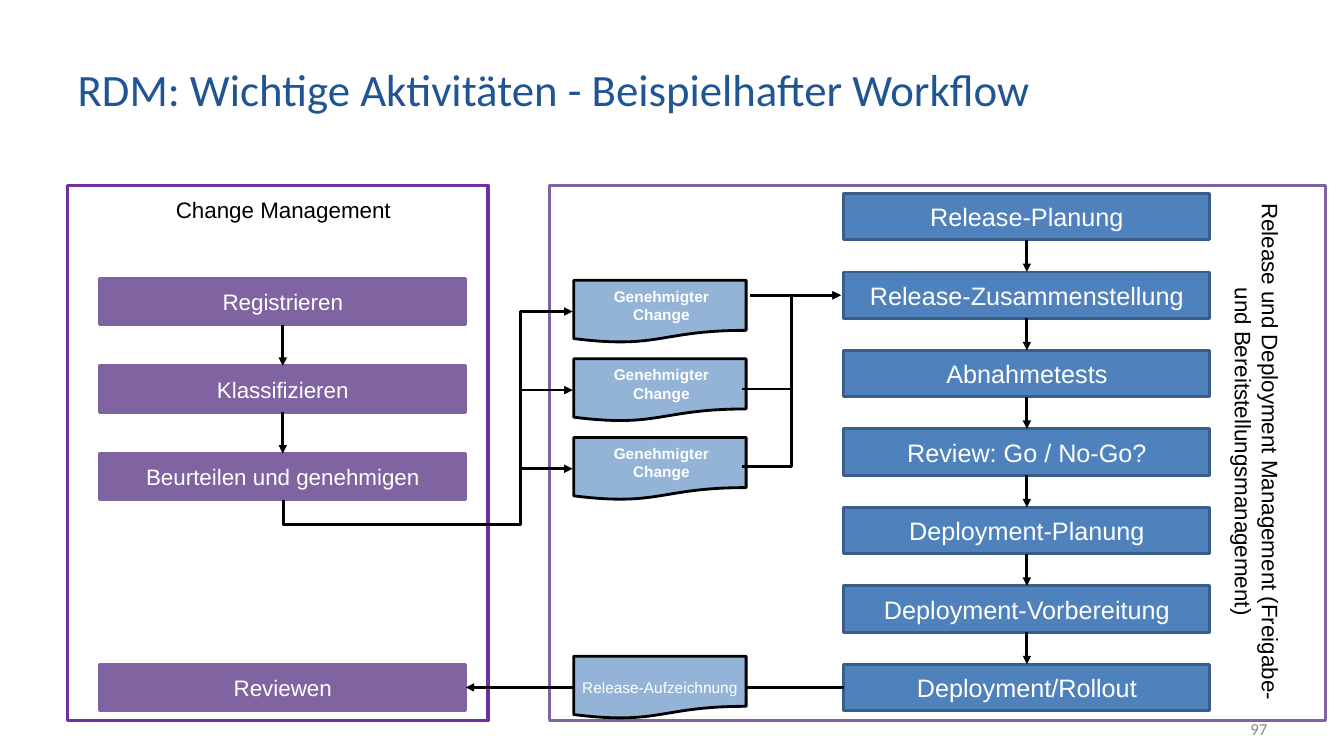
from dataclasses import dataclass

import lxml.etree
import pptx
import pptx.dml.color
import pptx.enum.shapes
import pptx.enum.text
import pptx.oxml.ns
import pptx.util

Inches = pptx.util.Inches
Pt = pptx.util.Pt
RGB = pptx.dml.color.RGBColor.from_string
SHAPE = pptx.enum.shapes.MSO_SHAPE
STRAIGHT = pptx.enum.shapes.MSO_CONNECTOR.STRAIGHT
ALIGN = pptx.enum.text.PP_ALIGN
ANCHOR = pptx.enum.text.MSO_ANCHOR
qn = pptx.oxml.ns.qn


@dataclass(frozen=True)
class Theme:
    title: str = "205595"
    change_frame: str = "7030A0"
    purple: str = "8064A2"
    blue: str = "4F81BD"
    blue_edge: str = "395E89"
    document: str = "93B3D7"
    black: str = "000000"
    white: str = "FFFFFF"
    grey: str = "888888"
    heading_font: str = "Calibri"
    body_font: str = "Arial"
    title_size: int = 32
    release_size: int = 18
    change_size: int = 16
    number_size: int = 12
    document_size: int = 11
    stroke: float = 2
    frame_stroke: float = 2.25


THEME = Theme()


def write(shape, text, *, size, color=THEME.white, font=THEME.body_font, bold=False,
          align=ALIGN.CENTER, anchor=ANCHOR.MIDDLE, inset=(0, 0, 0, 0)):
    """Set the text; inset is left, top, right, bottom in inches."""
    frame = shape.text_frame
    frame.text = text
    frame.word_wrap = True
    frame.auto_size = pptx.enum.text.MSO_AUTO_SIZE.NONE
    frame.vertical_anchor = anchor
    frame.margin_left, frame.margin_top, frame.margin_right, frame.margin_bottom = map(Inches, inset)
    paragraph = frame.paragraphs[0]
    paragraph.alignment = align
    paragraph.font.size = Pt(size)
    paragraph.font.name = font
    paragraph.font.bold = bold
    paragraph.font.color.rgb = RGB(color)


def outline(shape, color=THEME.black, *, width=THEME.stroke, fill=None, arrow=False):
    """Set line and fill, drop the shadow and optionally end in an arrowhead."""
    shape.line.color.rgb = RGB(color)
    shape.line.width = Pt(width)
    properties = shape._element.spPr
    if arrow:
        lxml.etree.SubElement(properties.find(qn("a:ln")), qn("a:tailEnd"), type="triangle")
    if hasattr(shape, "fill"):
        if fill:
            shape.fill.solid()
            shape.fill.fore_color.rgb = RGB(fill)
        else:
            shape.fill.background()
        shape.shadow.inherit = False
    else:
        lxml.etree.SubElement(properties, qn("a:effectLst"))


prs = pptx.Presentation()
prs.slide_width, prs.slide_height = Inches(13.33), Inches(7.5)
slide = prs.slides.add_slide(prs.slide_layouts[5])
shapes = slide.shapes
LABEL_INSET = (0.1, 0.05, 0.1, 0.05)

title = shapes.title
title.left, title.top, title.width, title.height = map(Inches, (0.67, 0.3, 9.91, 1.15))
write(title, "RDM: Wichtige Aktivitäten - Beispielhafter Workflow", size=THEME.title_size,
      color=THEME.title, font=THEME.heading_font, align=ALIGN.LEFT, inset=LABEL_INSET)

# Frames of the two processes
for left, width, color in ((0.67, 4.17, THEME.change_frame), (5.45, 7.7, THEME.purple)):
    process = shapes.add_shape(SHAPE.RECTANGLE, *map(Inches, (left, 1.84, width, 5.31)))
    outline(process, color, width=THEME.frame_stroke)

# Steps of both processes
STEP_WIDTH, STEP_HEIGHT = 3.63, 0.46
RELEASE_TOP, REVIEW_TOP = 1.92, 6.59
RELEASE_PITCH = (REVIEW_TOP - RELEASE_TOP) / 6
CHANGE_TOP, CHANGE_PITCH = 2.76, 0.87

change_names = ("Registrieren", "Klassifizieren", "Beurteilen und genehmigen")
release_names = ("Release-Planung", "Release-Zusammenstellung", "Abnahmetests",
                 "Review: Go / No-Go?", "Deployment-Planung",
                 "Deployment-Vorbereitung", "Deployment/Rollout")
change_plan = [(name, CHANGE_TOP + i * CHANGE_PITCH) for i, name in enumerate(change_names)]
change_plan.append(("Reviewen", REVIEW_TOP))
release_plan = [(name, RELEASE_TOP + i * RELEASE_PITCH) for i, name in enumerate(release_names)]

change_steps, release_steps = [], []
for steps, plan, left, fill, edge, size in (
        (change_steps, change_plan, 0.99, THEME.purple, THEME.purple, THEME.change_size),
        (release_steps, release_plan, 8.37, THEME.blue, THEME.blue_edge, THEME.release_size)):
    for name, top in plan:
        step = shapes.add_shape(SHAPE.RECTANGLE, *map(Inches, (left, top, STEP_WIDTH, STEP_HEIGHT)))
        outline(step, edge, fill=fill)
        write(step, name, size=size)
        steps.append(step)

# Arrows from step to step, and from the rollout back to the review
links = [(upper, 2, lower, 0) for steps in (change_steps[:3], release_steps)
         for upper, lower in zip(steps, steps[1:])]
links.append((release_steps[-1], 1, change_steps[-1], 3))
for source, source_side, target, target_side in links:
    link = shapes.add_connector(STRAIGHT, 0, 0, 0, 0)
    link.begin_connect(source, source_side)
    link.end_connect(target, target_side)
    outline(link, arrow=True)

# Documents handed over between the processes
DOCUMENT_LEFT, DOCUMENT_WIDTH, DOCUMENT_HEIGHT = 5.69, 1.71, 0.62
approved_tops = [2.78 + i * 0.78 for i in range(3)]
documents = [("Genehmigter Change", top, True, (0.18, 0, 0.15, 0)) for top in approved_tops]
documents.append(("Release-Aufzeichnung", 6.51, False, (0, 0.12, 0, 0)))
for name, top, bold, inset in documents:
    document = shapes.add_shape(SHAPE.FLOWCHART_DOCUMENT, *map(
        Inches, (DOCUMENT_LEFT, top, DOCUMENT_WIDTH, DOCUMENT_HEIGHT)))
    outline(document, fill=THEME.document)
    write(document, name, size=THEME.document_size, bold=bold, inset=inset)

# Bent arrows: approval to each document, lower documents to the release
APPROVAL_X, APPROVAL_BOTTOM = 2.81, 4.96
RELEASE_Y = 2.93
routes = [((APPROVAL_X, APPROVAL_BOTTOM), (APPROVAL_X, 5.2), (5.16, 5.2),
           (5.16, top + DOCUMENT_HEIGHT / 2), (5.68, top + DOCUMENT_HEIGHT / 2))
          for top in approved_tops]
routes += [((7.36, y), (7.85, y), (7.85, RELEASE_Y), (8.34, RELEASE_Y)) for y in (3.86, 4.63)]
for route in routes:
    start, *bends = [tuple(map(Inches, point)) for point in route]
    builder = shapes.build_freeform(*start)
    builder.add_line_segments(bends, close=False)
    outline(builder.convert_to_shape(), arrow=True)

first_document_line = shapes.add_connector(
    STRAIGHT, *map(Inches, (7.89, RELEASE_Y, 7.44, RELEASE_Y)))
outline(first_document_line)

# Process names and page number
change_label = shapes.add_textbox(*map(Inches, (1.04, 1.9, 3.54, 0.37)))
write(change_label, "Change Management", size=THEME.change_size, color=THEME.black,
      anchor=ANCHOR.TOP, inset=LABEL_INSET)

release_label = shapes.add_textbox(*map(Inches, (9.9, 4.16, 5.13, 0.64)))
release_label.rotation = 90
write(release_label, "Release und Deployment Management (Freigabe- und Bereitstellungsmanagement)",
      size=THEME.change_size, color=THEME.black, anchor=ANCHOR.TOP, inset=LABEL_INSET)

page_number = shapes.add_textbox(*map(Inches, (9.56, 7.03, 3.11, 0.4)))
write(page_number, "97", size=THEME.number_size, color=THEME.grey, font=THEME.heading_font,
      align=ALIGN.RIGHT, inset=LABEL_INSET)

prs.save("out.pptx")
